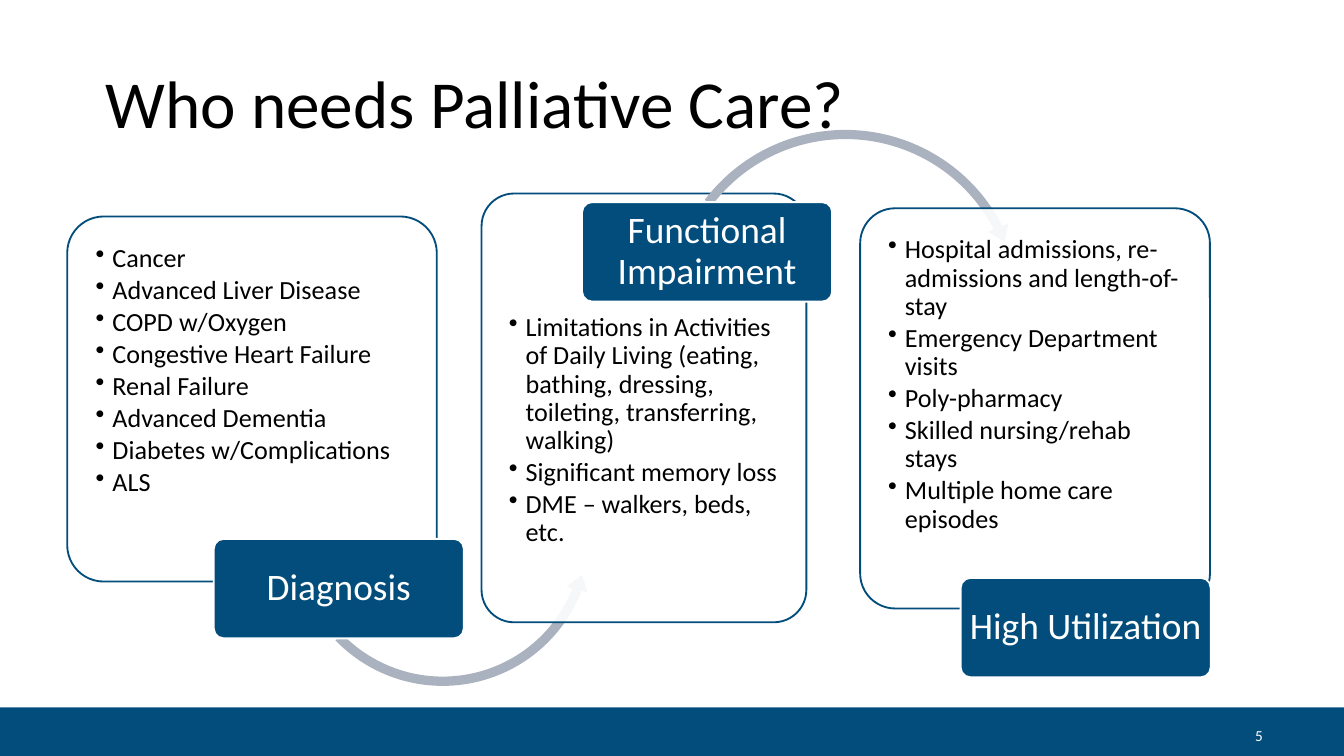
from lxml.etree import SubElement
from pptx import Presentation
from pptx.dml.color import RGBColor
from pptx.enum.shapes import MSO_SHAPE
from pptx.enum.text import MSO_ANCHOR, PP_ALIGN
from pptx.oxml.ns import qn
from pptx.util import Pt

NAVY, GREY, WHITE, BLACK = "024D7C", "ABB2BF", "FFFFFF", "000000"
LABEL_SIZE = (134, 53.3)

STEPS = [
    {
        "panel": (36, 116, 198, 195.6),
        "text_top": 9.5,
        "bullets": [
            "Cancer",
            "Advanced Liver Disease",
            "COPD w/Oxygen",
            "Congestive Heart Failure",
            "Renal Failure",
            "Advanced Dementia",
            "Diabetes w/Complications",
            "ALS",
        ],
        "arrow": (MSO_SHAPE.LEFT_CIRCULAR_ARROW, (154, 204.5, 166.3, 166.3),
                  (0.03, 3.689, 12.828, 81.629, 0.035)),
        "label": ("Diagnosis", 114.5, 288.7),
    },
    {
        "panel": (258, 103.7, 174, 229.7),
        "text_top": 59.5,
        "bullets": [
            "Limitations in Activities of Daily Living (eating, bathing, "
            "dressing, toileting, transferring, walking)",
            "Significant memory loss",
            "DME – walkers, beds, etc.",
        ],
        "arrow": (MSO_SHAPE.CIRCULAR_ARROW, (355, 66.2, 195.8, 195.8),
                  (0.025, 3.094, 199.664, 130.268, 0.03)),
        "label": ("Functional Impairment", 311.8, 108.3),
    },
    {
        "panel": (460.8, 111.6, 187.4, 214.4),
        "text_top": 9.5,
        "bullets": [
            "Hospital admissions, re-admissions and length-of-stay",
            "Emergency Department visits",
            "Poly-pharmacy",
            "Skilled nursing/rehab stays",
            "Multiple home care episodes",
        ],
        "arrow": None,
        "label": ("High Utilization", 514.6, 309.6),
    },
]


def color(hex_value):
    return RGBColor.from_string(hex_value)


def set_values(target, values):
    for name, value in values.items():
        setattr(target, name, value)


def add_shape(slide, kind, box, fill, line=None, adjustments=()):
    shape = slide.shapes.add_shape(kind, *map(Pt, box))
    shape.shadow.inherit = False
    shape.fill.solid()
    shape.fill.fore_color.rgb = color(fill)
    if line:
        shape.line.color.rgb = color(line)
        shape.line.width = Pt(1)
    else:
        shape.line.fill.background()
    for index, value in enumerate(adjustments):
        shape.adjustments[index] = value
    return shape


def set_frame(frame, insets, anchor):
    """Insets are left, top, right and bottom in points."""
    left, top, right, bottom = map(Pt, insets)
    set_values(frame, {
        "word_wrap": True, "vertical_anchor": anchor,
        "margin_left": left, "margin_top": top,
        "margin_right": right, "margin_bottom": bottom,
    })


def write(paragraph, text, size, text_color, **layout):
    paragraph.text = text
    set_values(paragraph, {"alignment": PP_ALIGN.LEFT, "line_spacing": 0.9} | layout)
    set_values(paragraph.font, {"name": "Calibri", "size": Pt(size)})
    paragraph.font.color.rgb = color(text_color)


def add_bullet(paragraph):
    properties = paragraph._p.get_or_add_pPr()
    properties.set("marL", str(Pt(9)))
    properties.set("indent", str(-Pt(9)))
    SubElement(properties, qn("a:buChar"), char="•")


def add_text(slide, box, text, size, text_color):
    frame = slide.shapes.add_textbox(*map(Pt, box)).text_frame
    set_frame(frame, (7.2, 0, 7.2, 0), MSO_ANCHOR.MIDDLE)
    write(frame.paragraphs[0], text, size, text_color)


def add_panel(slide, box, text_top, bullets):
    panel = add_shape(slide, MSO_SHAPE.ROUNDED_RECTANGLE, box, WHITE, NAVY, [0.1])
    fill_color = panel._element.spPr.find(qn("a:solidFill"))[0]
    SubElement(fill_color, qn("a:alpha"), val="90000")
    frame = panel.text_frame
    set_frame(frame, (9.5, text_top, 9.5, 9.5), MSO_ANCHOR.TOP)
    for index, text in enumerate(bullets):
        paragraph = frame.add_paragraph() if index else frame.paragraphs[0]
        add_bullet(paragraph)
        write(paragraph, text, 14, BLACK, space_after=Pt(2))


def add_label(slide, text, left, top):
    label = add_shape(slide, MSO_SHAPE.ROUNDED_RECTANGLE,
                      (left, top, *LABEL_SIZE), NAVY, WHITE, [0.1])
    set_frame(label.text_frame, (2.5, 2, 2.5, 2), MSO_ANCHOR.MIDDLE)
    write(label.text_frame.paragraphs[0], text, 20, WHITE, alignment=PP_ALIGN.CENTER)


def main():
    presentation = Presentation()
    set_values(presentation, {"slide_width": Pt(720), "slide_height": Pt(405)})
    slide = presentation.slides.add_slide(presentation.slide_layouts[6])

    add_shape(slide, MSO_SHAPE.RECTANGLE, (0, 379, 720, 26), NAVY)
    add_text(slide, (49.5, 19.5, 621, 75.6), "Who needs Palliative Care?", 36, BLACK)
    add_text(slide, (665.3, 389, 38, 11.5), "5", 8.2, WHITE)

    for step in STEPS:
        add_panel(slide, step["panel"], step["text_top"], step["bullets"])
        if step["arrow"]:
            kind, box, adjustments = step["arrow"]
            add_shape(slide, kind, box, GREY, adjustments=adjustments)
        add_label(slide, *step["label"])

    presentation.save("out.pptx")


if __name__ == "__main__":
    main()
